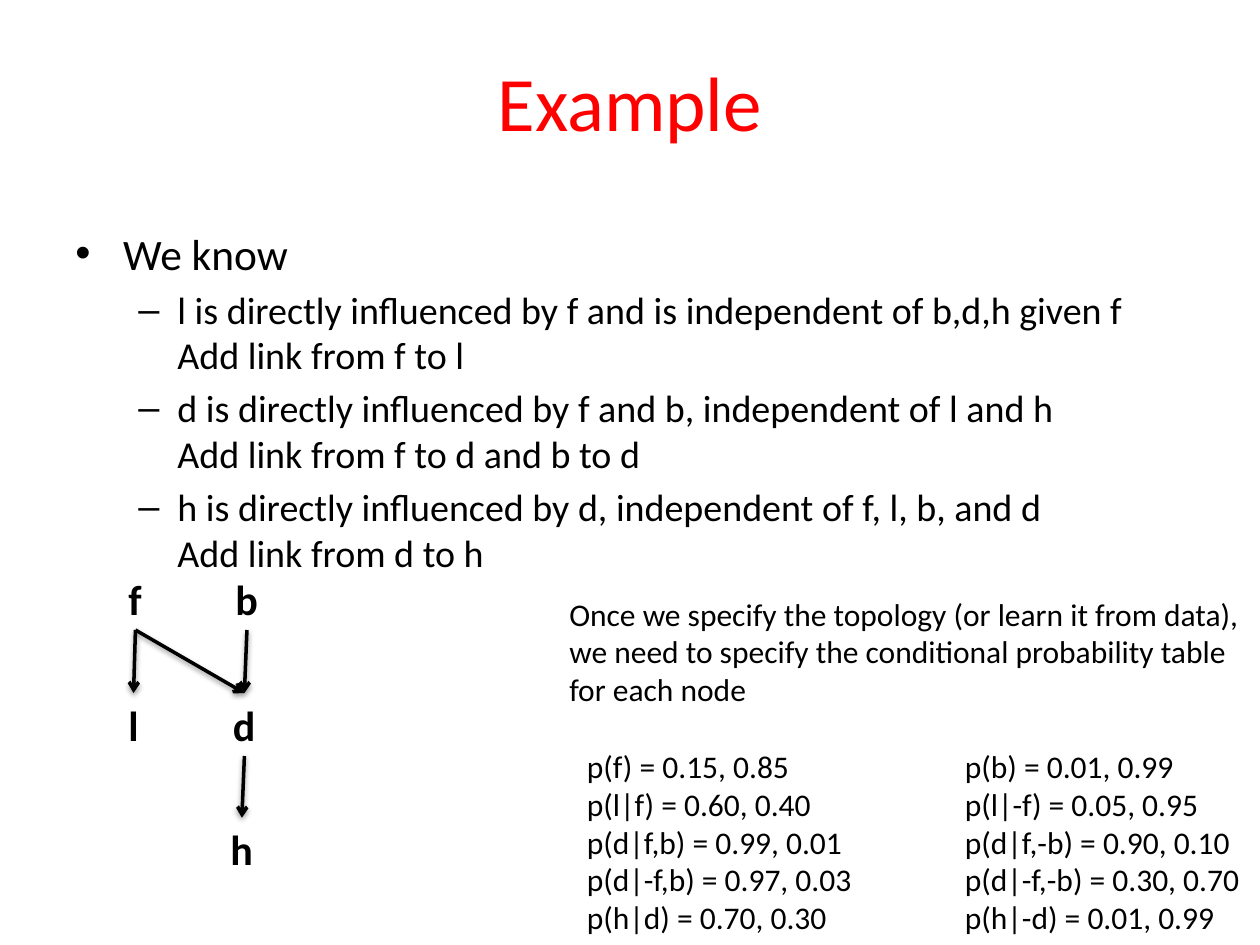
from dataclasses import dataclass
from lxml.etree import SubElement
from pptx import Presentation
from pptx.dml.color import RGBColor
from pptx.enum.shapes import MSO_CONNECTOR
from pptx.enum.text import MSO_ANCHOR, MSO_AUTO_SIZE, PP_ALIGN
from pptx.oxml.ns import qn
from pptx.util import Inches, Pt


@dataclass(frozen=True)
class Theme:
    face: str = "Calibri"
    heading: RGBColor = RGBColor(0xFF, 0x00, 0x00)
    ink: RGBColor = RGBColor(0x00, 0x00, 0x00)
    title_size: float = 44
    topic_size: float = 24.8
    fact_size: float = 21.7
    node_size: float = 24
    note_size: float = 18


theme = Theme()
deck = Presentation()
deck.slide_width, deck.slide_height = Inches(10), Inches(7.5)
slide = deck.slides.add_slide(deck.slide_layouts[6])


def add_text(left, top, width, height, lines, size, color=theme.ink, bold=False, wrap=False):
    box = slide.shapes.add_textbox(Inches(left), Inches(top), Inches(width), Inches(height))
    frame = box.text_frame
    frame.word_wrap = wrap
    frame.auto_size = MSO_AUTO_SIZE.NONE if wrap else MSO_AUTO_SIZE.SHAPE_TO_FIT_TEXT
    for index, line in enumerate(lines):
        paragraph = frame.paragraphs[0] if index == 0 else frame.add_paragraph()
        paragraph.text = line
        style(paragraph, size, color, bold)
    return box


def style(paragraph, size, color=theme.ink, bold=False):
    font = paragraph.font
    font.name, font.size, font.bold = theme.face, Pt(size), bold
    font.color.rgb = color


title = add_text(0.5, 0.17, 9, 1.25, ["Example"], theme.title_size, theme.heading, wrap=True)
title.text_frame.vertical_anchor = MSO_ANCHOR.MIDDLE
title.text_frame.paragraphs[0].alignment = PP_ALIGN.CENTER

outline = [
    (0, "We know"),
    (1, "l is directly influenced by f and is independent of b,d,h given f\nAdd link from f to l"),
    (1, "d is directly influenced by f and b, independent of l and h\nAdd link from f to d and b to d"),
    (1, "h is directly influenced by d, independent of f, l, b, and d\nAdd link from d to h"),
]
levels = [
    ("•", 0.38, 0.38, theme.topic_size),
    ("–", 0.81, 0.31, theme.fact_size),
]
facts = add_text(0.5, 1.75, 9, 2.5, [], theme.fact_size, wrap=True).text_frame
for index, (level, line) in enumerate(outline):
    bullet, margin, hanging, size = levels[level]
    paragraph = facts.paragraphs[0] if index == 0 else facts.add_paragraph()
    paragraph.text = line
    paragraph.level = level
    if index:
        paragraph.space_before = Pt(round(size * 0.2, 1))
    properties = paragraph._p.get_or_add_pPr()
    properties.set("marL", str(Inches(margin)))
    properties.set("indent", str(-Inches(hanging)))
    SubElement(properties, qn("a:buFont"), typeface="Arial")
    SubElement(properties, qn("a:buChar"), char=bullet)
    style(paragraph, size)

add_text(4.42, 4.67, 5.58, 1.01, [
    "Once we specify the topology (or learn it from data),",
    "we need to specify the conditional probability table",
    "for each node",
], theme.note_size)

probabilities = [
    ("p(f) = 0.15, 0.85", "p(b) = 0.01, 0.99"),
    ("p(l|f) = 0.60, 0.40", "p(l|-f) = 0.05, 0.95"),
    ("p(d|f,b) = 0.99, 0.01", "p(d|f,-b) = 0.90, 0.10"),
    ("p(d|-f,b) = 0.97, 0.03", "p(d|-f,-b) = 0.30, 0.70"),
    ("p(h|d) = 0.70, 0.30", "p(h|-d) = 0.01, 0.99"),
]
tables = add_text(4.56, 5.88, 5.44, 1.62, [], theme.note_size).text_frame
for index, pair in enumerate(probabilities):
    paragraph = tables.paragraphs[0] if index == 0 else tables.add_paragraph()
    paragraph.text = "\t".join(pair)
    stops = SubElement(paragraph._p.get_or_add_pPr(), qn("a:tabLst"))
    SubElement(stops, qn("a:tab"), pos=str(Inches(3)), algn="l")
    style(paragraph, theme.note_size)

nodes = {
    name: add_text(left, top, width, 0.5, [name], theme.node_size, bold=True)
    for name, left, top, width in [
        ("f", 0.92, 4.5, 0.31),
        ("l", 0.92, 5.5, 0.28),
        ("b", 1.77, 4.5, 0.38),
        ("d", 1.75, 5.5, 0.38),
        ("h", 1.73, 6.49, 0.38),
    ]
}

for parent, child in ["fl", "bd", "fd", "dh"]:
    link = slide.shapes.add_connector(MSO_CONNECTOR.STRAIGHT, 0, 0, 0, 0)
    link.begin_connect(nodes[parent], 2)
    link.end_connect(nodes[child], 0)
    link.line.color.rgb = theme.ink
    link.line.width = Pt(2)
    SubElement(link.line._get_or_add_ln(), qn("a:tailEnd"), type="arrow")
    effects = SubElement(link._element.spPr, qn("a:effectLst"))
    shadow = SubElement(effects, qn("a:outerShdw"), blurRad=str(Pt(3.1)), dist=str(Pt(1.6)),
                        dir="5400000", rotWithShape="0")
    shade = SubElement(shadow, qn("a:srgbClr"), val=str(theme.ink))
    SubElement(shade, qn("a:alpha"), val="38000")

deck.save("out.pptx")
